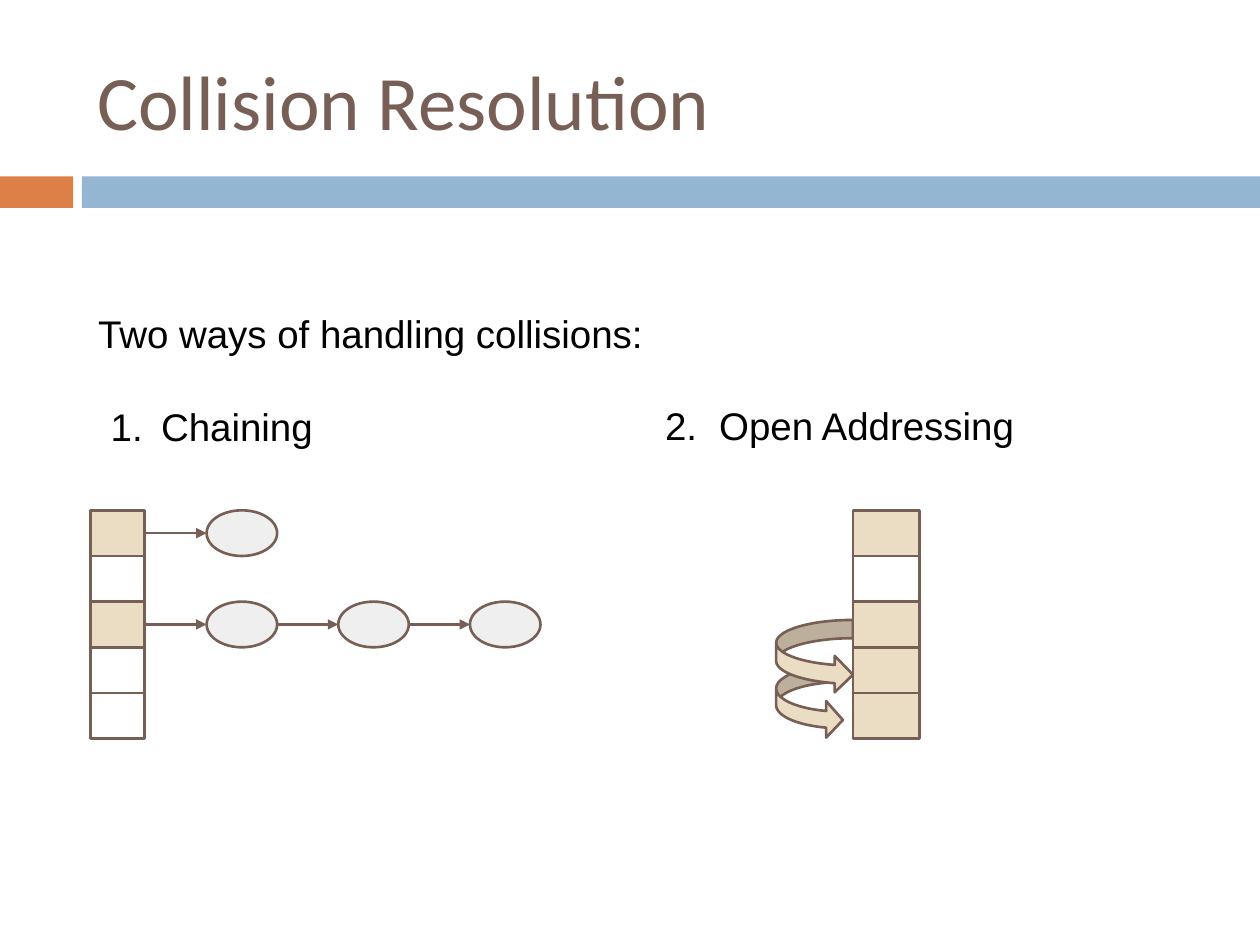
from lxml import etree
from pptx import Presentation
from pptx.dml.color import RGBColor
from pptx.enum.shapes import MSO_CONNECTOR as Connector, MSO_SHAPE as Shape
from pptx.enum.text import MSO_ANCHOR as Anchor, PP_ALIGN as Align
from pptx.oxml.ns import qn
from pptx.util import Inches, Pt

BROWN = RGBColor(0x77, 0x5F, 0x55)
ORANGE = RGBColor(0xDD, 0x80, 0x47)
BLUE = RGBColor(0x94, 0xB6, 0xD2)
TAN = RGBColor(0xEB, 0xDD, 0xC3)
GREY = RGBColor(0xEF, 0xEF, 0xEF)
WHITE = RGBColor(0xFF, 0xFF, 0xFF)
BLACK = RGBColor(0, 0, 0)

TABLE_TOP, CELL_HEIGHT = 4.05, 0.3625
NODE_LEFT, NODE_WIDTH, NODE_STEP = 1.64, 0.56, 1.045


class SlideBuilder:
    line_width = Pt(1.5)
    body_font, body_size = "Arial", Pt(22)

    def __init__(self, page):
        self.page = page

    def title(self, text, left, top, width, height):
        box = self.page.shapes.title
        box.left, box.top = Inches(left), Inches(top)
        box.width, box.height = Inches(width), Inches(height)
        frame = box.text_frame
        frame.text = text
        frame.vertical_anchor = Anchor.MIDDLE
        para = frame.paragraphs[0]
        para.alignment = Align.LEFT
        self.style(para, "Calibri", Pt(44), BROWN)

    def style(self, para, name, size, color):
        para.font.name, para.font.size = name, size
        para.font.color.rgb = color

    def shape(self, kind, left, top, width, height, fill, line=BROWN):
        shape = self.page.shapes.add_shape(
            kind, Inches(left), Inches(top), Inches(width), Inches(height))
        shape.shadow.inherit = False
        shape.fill.solid()
        shape.fill.fore_color.rgb = fill
        if line is None:
            shape.line.fill.background()
        else:
            shape.line.color.rgb = line
            shape.line.width = self.line_width
        return shape

    def probe_arrow(self, top, width, head):
        arrow = self.shape(Shape.CURVED_RIGHT_ARROW, 6.16, top, width, 0.58, TAN)
        for index, value in enumerate((0.25, head, 0.25)):
            arrow.adjustments[index] = value

    def text(self, left, top, width, height, lines):
        box = self.page.shapes.add_textbox(
            Inches(left), Inches(top), Inches(width), Inches(height))
        frame = box.text_frame
        frame.word_wrap = True
        frame.margin_left = frame.margin_right = Inches(0.1)
        frame.margin_top = frame.margin_bottom = Inches(0.1)
        frame.text = "\n".join(lines)
        for para in frame.paragraphs:
            self.style(para, self.body_font, self.body_size, BLACK)
        return frame.paragraphs

    def number(self, para, start, margin, indent):
        """Turn a paragraph into a numbered item."""
        props = para._p.get_or_add_pPr()
        props.set("marL", str(Inches(margin)))
        props.set("indent", str(Inches(indent)))
        bullet = etree.Element(qn("a:buAutoNum"), type="arabicPeriod", startAt=str(start))
        props.find(qn("a:defRPr")).addprevious(bullet)

    def arrow(self, start, end, y):
        line = self.page.shapes.add_connector(
            Connector.STRAIGHT, Inches(start), Inches(y), Inches(end), Inches(y))
        line.line.color.rgb = BROWN
        line.line.width = self.line_width
        etree.SubElement(line.line._get_or_add_ln(), qn("a:tailEnd"), type="triangle")
        etree.SubElement(line._element.spPr, qn("a:effectLst"))

    def hash_table(self, left, width, fills):
        for row, fill in enumerate(fills):
            self.shape(Shape.RECTANGLE, left, TABLE_TOP + row * CELL_HEIGHT,
                       width, CELL_HEIGHT, fill)

    def chain(self, start, row, count):
        """Draw linked nodes leading right from a table row."""
        top = TABLE_TOP + row * CELL_HEIGHT
        for index in range(count):
            left = NODE_LEFT + index * NODE_STEP
            self.shape(Shape.OVAL, left, top, NODE_WIDTH, CELL_HEIGHT, GREY)
            self.arrow(start, left, top + CELL_HEIGHT / 2)
            start = left + NODE_WIDTH


def main():
    deck = Presentation()
    deck.slide_width, deck.slide_height = Inches(10), Inches(7.5)
    slide = SlideBuilder(deck.slides.add_slide(deck.slide_layouts[5]))

    slide.shape(Shape.RECTANGLE, 0, 1.4, 0.58, 0.25, ORANGE, None)
    slide.shape(Shape.RECTANGLE, 0.65, 1.4, 9.35, 0.25, BLUE, None)
    slide.title("Collision Resolution", 0.67, 0.25, 8.92, 1.08)

    slide.probe_arrow(5.28, 0.53, 0.574)
    slide.probe_arrow(4.92, 0.61, 0.5)

    intro, chaining = slide.text(
        0.68, 2.36, 7.51, 1.28, ["Two ways of handling collisions:", "Chaining"])
    chaining.space_before = Pt(27)
    slide.number(chaining, 1, 0.5, -0.4)
    addressing, = slide.text(5.18, 3.09, 4, 0.55, ["Open Addressing"])
    slide.number(addressing, 2, 0.43, -0.43)

    slide.hash_table(0.72, 0.43, [TAN, WHITE, TAN, WHITE, WHITE])
    slide.chain(1.15, 0, 1)
    slide.chain(1.15, 2, 3)
    slide.hash_table(6.77, 0.53, [TAN, WHITE, TAN, TAN, TAN])

    deck.save("out.pptx")


if __name__ == "__main__":
    main()
